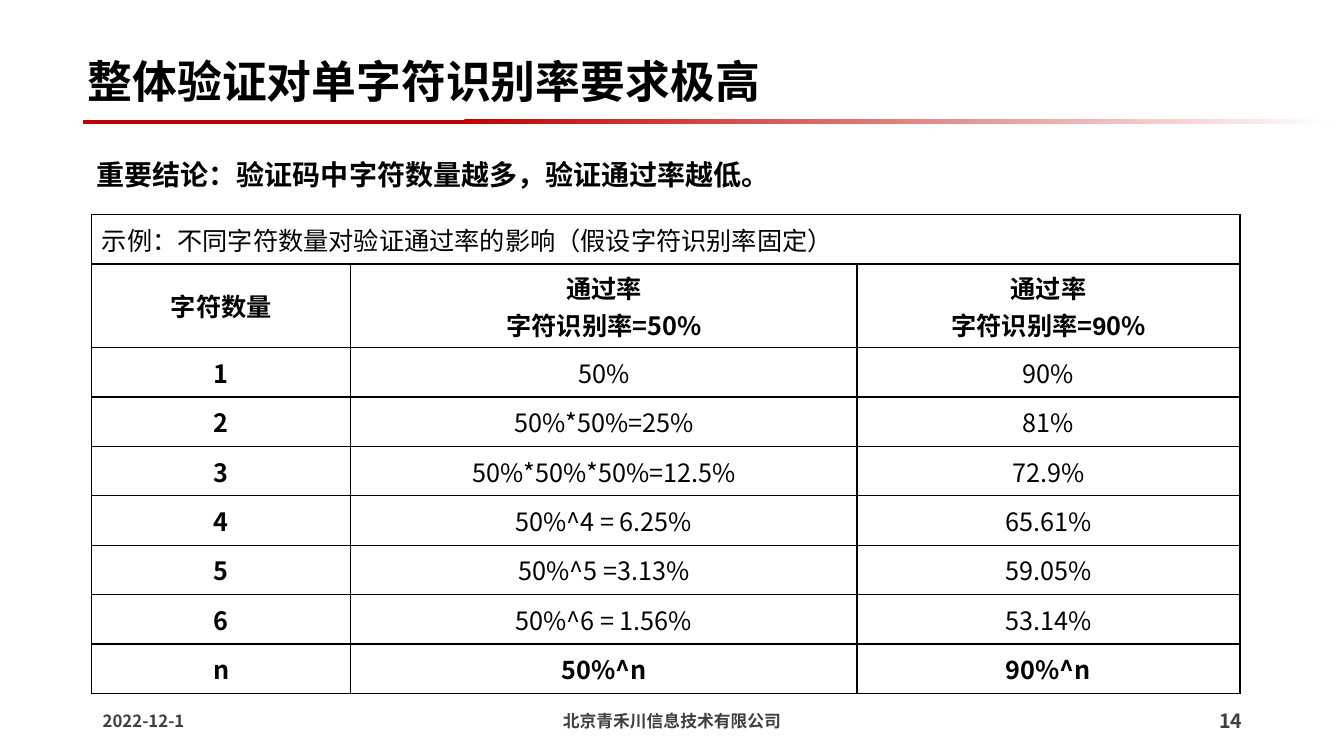
import pptx
import pptx.dml.color
import pptx.enum.shapes
import pptx.enum.text
import pptx.oxml
import pptx.oxml.ns
import pptx.util

Inches = pptx.util.Inches
Pt = pptx.util.Pt
RGBColor = pptx.dml.color.RGBColor
PP_ALIGN = pptx.enum.text.PP_ALIGN
ANCHOR = pptx.enum.text.MSO_ANCHOR

BLACK = RGBColor(0x00, 0x00, 0x00)
WHITE = RGBColor(0xFF, 0xFF, 0xFF)
GREY = RGBColor(0x40, 0x40, 0x40)
RED = RGBColor(0xC0, 0x00, 0x00)
FONT = "Noto Sans CJK SC"

CAPTION = "示例：不同字符数量对验证通过率的影响（假设字符识别率固定）"
COLUMN_WIDTHS = [2.57, 5.02, 3.8]
HEADER_HEIGHT = 0.83
ROW_HEIGHT = 0.49
# Each cell is a list of lines, each line a list of (text, Latin font) runs
HEADER = [
    [[("字符数量", FONT)]],
    [[("通过率", FONT)], [("字符识别率=50%", FONT)]],
    [[("通过率", FONT)], [("字符识别率=", FONT), ("9", "Arial"), ("0%", FONT)]],
]
PASS_RATES = [
    ("1", "50%", "90%"),
    ("2", "50%*50%=25%", "81%"),
    ("3", "50%*50%*50%=12.5%", "72.9%"),
    ("4", "50%^4 = 6.25%", "65.61%"),
    ("5", "50%^5 =3.13%", "59.05%"),
    ("6", "50%^6 = 1.56%", "53.14%"),
    ("n", "50%^n", "90%^n"),
]


def add_run(paragraph, text, size, color=BLACK, bold=True, latin=FONT):
    run = paragraph.add_run()
    run.text = text
    run.font.size = Pt(size)
    run.font.bold = bold
    run.font.color.rgb = color
    run.font.name = latin
    east_asian = pptx.oxml.parse_xml(
        f'<a:ea {pptx.oxml.ns.nsdecls("a")} typeface="{FONT}"/>')
    run.font._element.append(east_asian)


def add_text(slide, box, text, size, color=BLACK, align=PP_ALIGN.LEFT,
             anchor=ANCHOR.MIDDLE, line_spacing=1.0):
    frame = slide.shapes.add_textbox(*map(Inches, box)).text_frame
    frame.word_wrap = True
    frame.vertical_anchor = anchor
    paragraph = frame.paragraphs[0]
    paragraph.alignment = align
    paragraph.line_spacing = line_spacing
    add_run(paragraph, text, size, color)


def add_heading(slide, left, top):
    add_text(slide, (left, top, 11.49, 0.89), "整体验证对单字符识别率要求极高", 32,
             line_spacing=0.9)
    # Red rule that fades to the right
    rule = slide.shapes.add_shape(
        pptx.enum.shapes.MSO_SHAPE.RECTANGLE,
        *map(Inches, (left + 0.05, top + 0.8, 12.4, 0.04)))
    rule.shadow.inherit = False
    rule.line.fill.background()
    rule.fill.gradient()
    rule.fill.gradient_angle = 3
    for stop, position, color in zip(rule.fill.gradient_stops, (0.3, 1), (RED, WHITE)):
        stop.position = position
        stop.color.rgb = color


def style_cell(cell):
    cell.vertical_anchor = ANCHOR.MIDDLE
    cell.fill.solid()
    cell.fill.fore_color.rgb = WHITE
    properties = cell._tc.get_or_add_tcPr()
    for index, side in enumerate(("lnL", "lnR", "lnT", "lnB")):
        properties.insert(index, pptx.oxml.parse_xml(
            f'<a:{side} {pptx.oxml.ns.nsdecls("a")} w="{Pt(1)}">'
            f'<a:solidFill><a:srgbClr val="{BLACK}"/></a:solidFill></a:{side}>'))


def fill_cell(cell, lines, bold, align=PP_ALIGN.CENTER):
    frame = cell.text_frame
    for index, line in enumerate(lines):
        paragraph = frame.add_paragraph() if index else frame.paragraphs[0]
        paragraph.alignment = align
        for text, latin in line:
            add_run(paragraph, text, 18, bold=bold, latin=latin)


def add_pass_rate_table(slide, left, top):
    heights = [ROW_HEIGHT, HEADER_HEIGHT] + [ROW_HEIGHT] * len(PASS_RATES)
    table = slide.shapes.add_table(
        len(heights), len(COLUMN_WIDTHS),
        *map(Inches, (left, top, sum(COLUMN_WIDTHS), sum(heights)))).table
    table.first_row = table.horz_banding = False
    for column, width in zip(table.columns, COLUMN_WIDTHS):
        column.width = Inches(width)
    for row, height in zip(table.rows, heights):
        row.height = Inches(height)
    for cell in table.iter_cells():
        style_cell(cell)

    # Caption across all columns
    table.cell(0, 0).merge(table.cell(0, len(COLUMN_WIDTHS) - 1))
    fill_cell(table.cell(0, 0), [[(CAPTION, FONT)]], False, PP_ALIGN.LEFT)

    # Column headings, then one row per character count
    for column, lines in enumerate(HEADER):
        fill_cell(table.cell(1, column), lines, True)
    for row, rates in enumerate(PASS_RATES, start=2):
        for column, text in enumerate(rates):
            bold = column == 0 or rates[0] == "n"
            fill_cell(table.cell(row, column), [[(text, FONT)]], bold)


def add_footer(slide, left, top):
    for offset, width, text, size, align in (
        (0, 1.21, "2022-12-1", 12, PP_ALIGN.LEFT),
        (4.38, 2.73, "北京青禾川信息技术有限公司", 12, PP_ALIGN.CENTER),
        (10.58, 0.92, "14", 14, PP_ALIGN.RIGHT),
    ):
        add_text(slide, (left + offset, top, width, 0.4), text, size, GREY, align)


def main():
    presentation = pptx.Presentation()
    presentation.slide_width = Inches(13.33)
    presentation.slide_height = Inches(7.5)
    slide = presentation.slides.add_slide(presentation.slide_layouts[6])
    add_heading(slide, 0.77, 0.39)
    add_text(slide, (0.86, 1.28, 10.9, 0.78),
             "重要结论：验证码中字符数量越多，验证通过率越低。", 20,
             anchor=ANCHOR.TOP, line_spacing=1.7)
    add_pass_rate_table(slide, 0.91, 2.13)
    add_footer(slide, 0.92, 6.95)
    presentation.save("out.pptx")


if __name__ == "__main__":
    main()
